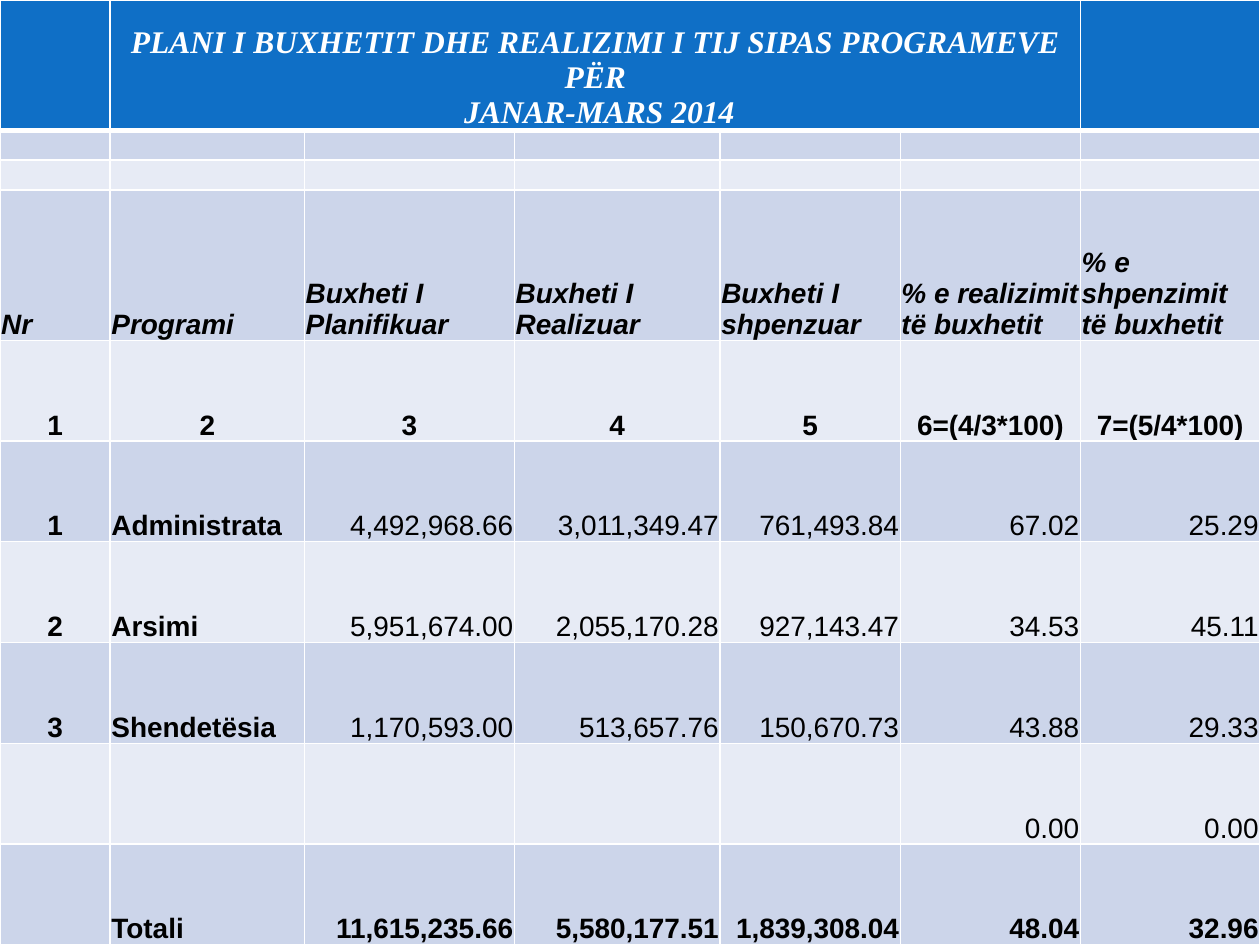
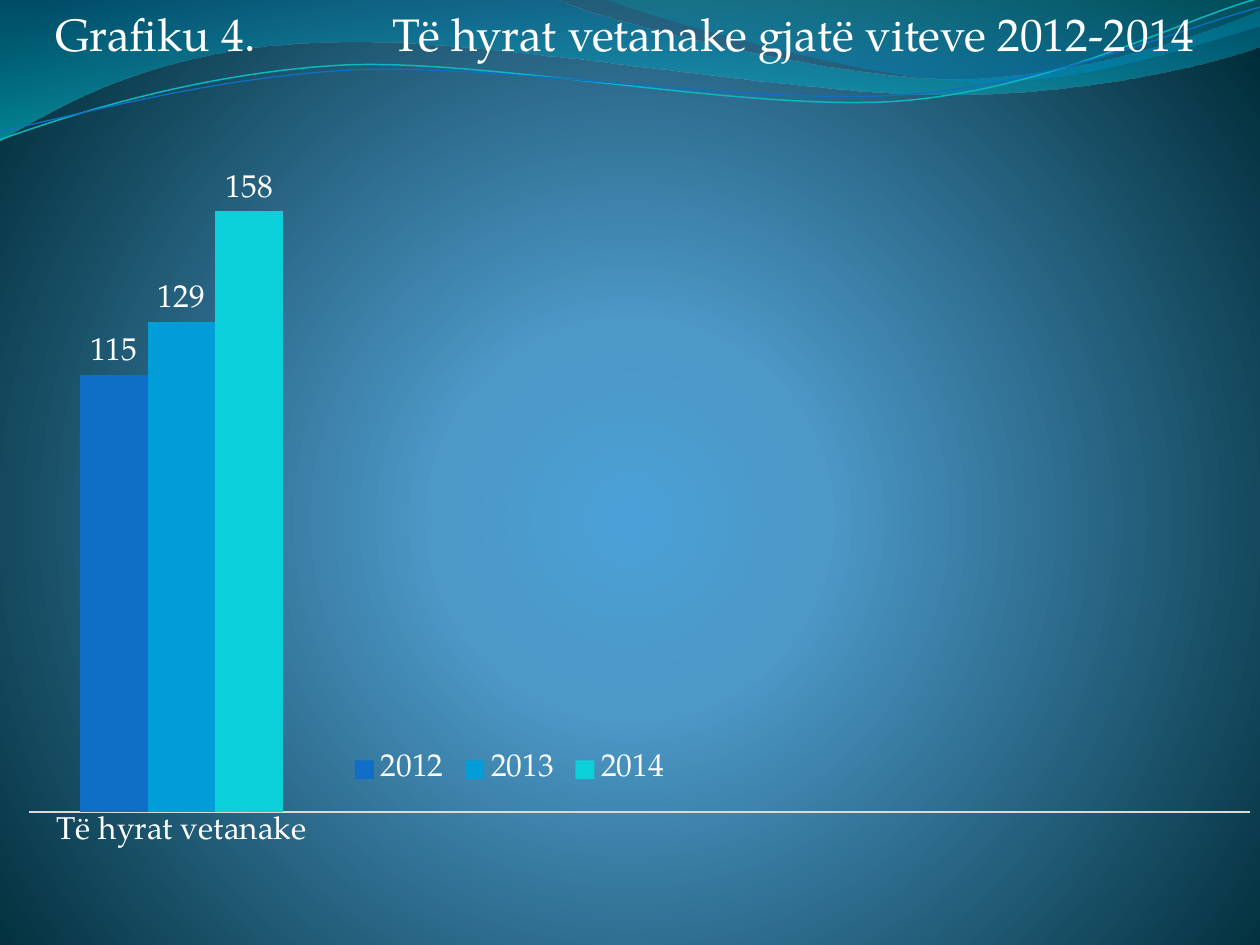
import pptx
import pptx.chart.data
import pptx.dml.color
import pptx.enum.chart
import pptx.enum.text
import pptx.oxml.ns
import pptx.util
from lxml import etree

Pt = pptx.util.Pt
qn = pptx.oxml.ns.qn
ALIGN = pptx.enum.text.PP_ALIGN
LEFT, CENTER, RIGHT = ALIGN.LEFT, ALIGN.CENTER, ALIGN.RIGHT
WIDTH, HEIGHT = 720, 540

# Colours and fonts
WHITE, BLACK = "FFFFFF", "000000"
BLUE, SKY, CYAN = "0F6FC6", "009DD9", "0BD0D9"
DARK_ROW, LIGHT_ROW = "CCD5EA", "E7EBF5"
THEME_FONT, TABLE_FONT, HEADING_FONT = "TeX Gyre Pagella", "Arial", "Times New Roman"

# Wave outlines: a start, then lines (x, y) and curves (two handles and an end)
UPPER_WAVE = [(0, 0), (317, -1), (343, 12, 478, 45, 546, 45), (614, 45, 690, 19, 720, 6),
              (721, 26), (708, 32, 626, 55, 537, 54), (448, 54, 275, 20, 185, 24),
              (93, 26, 33, 60, -1, 81)]
RIGHT_WAVE = [(345, -1), (366, 8, 491, 45, 554, 47), (616, 50, 692, 23, 720, 15), (720, 0)]
TEAL_CURVE = [(-2, 63), (34, 52, 114, 29.5, 199, 29.5), (284, 30.5, 426, 67, 512, 65),
              (600, 62.5, 676, 26, 721, 16)]
BLUE_CURVE = [(-2, 58), (33, 53.5, 118, 32.5, 204, 32.5), (290, 33.5, 429, 63.5, 515, 61.5),
              (602, 59.5, 679, 30, 722, 21)]
CURVE_TILT = -2.7

# Budget table
COLUMN_WIDTHS = [63, 111, 120, 117.5, 103, 103, 102.5]
TOP_ROW_HEIGHTS = [74.5, 17, 17, 86]
BUDGET_HEADING = ["PLANI I BUXHETIT DHE REALIZIMI I TIJ SIPAS PROGRAMEVE PËR", " JANAR-MARS 2014"]
EMPTY_ROW = [""] * 7
BUDGET_ROWS = [
    EMPTY_ROW,
    EMPTY_ROW,
    ["Nr", "Programi", "Buxheti I Planifikuar", "Buxheti I Realizuar", "Buxheti I shpenzuar",
     "% e realizimit të buxhetit", "% e shpenzimit të buxhetit"],
    ["1", "2", "3", "4", "5", "6=(4/3*100)", "7=(5/4*100)"],
    ["1", "Administrata", "4,492,968.66", "3,011,349.47", "761,493.84", "67.02", "25.29"],
    ["2", "Arsimi", "5,951,674.00", "2,055,170.28", "927,143.47", "34.53", "45.11"],
    ["3", "Shendetësia", "1,170,593.00", "513,657.76", "150,670.73", "43.88", "29.33"],
    ["", "", "", "", "", "0.00", "0.00"],
    ["", "Totali", "11,615,235.66", "5,580,177.51", "1,839,308.04", "48.04", "32.96"],
]
LABEL_ROW, NUMBER_ROW, TOTAL_ROW = 3, 4, 9

# Own revenues by year
REVENUES = [("2012", 115, BLUE), ("2013", 129, SKY), ("2014", 158, CYAN)]


def color(hex_code):
    return pptx.dml.color.RGBColor.from_string(hex_code)


def style_font(font, name=THEME_FONT, size=18, ink=WHITE, bold=False, italic=False):
    font.name, font.size, font.bold, font.italic = name, Pt(size), bold, italic
    font.color.rgb = color(ink)


def write(paragraph, text, align=LEFT, **font_format):
    paragraph.alignment = align
    run = paragraph.add_run()
    run.text = text
    style_font(run.font, **font_format)


def add_xml(parent, tag, **attributes):
    return etree.SubElement(parent, qn(tag), {key: str(value) for key, value in attributes.items()})


def add_gradient(owner, fill, stops, circle=None):
    """Stops are (percent, colour, opacity percent); without a circle the blend runs downwards."""
    fill.gradient()
    gradient = owner.element.find(".//" + qn("a:gradFill"))
    gradient.clear()
    stop_list = add_xml(gradient, "a:gsLst")
    for position, hex_code, opacity in stops:
        stop = add_xml(stop_list, "a:gs", pos=position * 1000)
        tint = add_xml(stop, "a:srgbClr", val=hex_code)
        if opacity < 100:
            add_xml(tint, "a:alpha", val=opacity * 1000)
    if circle:
        add_xml(add_xml(gradient, "a:path", path="circle"), "a:fillToRect", **circle)
    else:
        add_xml(gradient, "a:lin", ang=5400000, scaled=0)


def bend(shape, outline):
    """Turn the straight segments that stand for curves into Bézier curves."""
    segments = shape.element.findall(".//" + qn("a:lnTo"))
    for straight, segment in zip(segments, outline[1:]):
        if len(segment) == 2:
            continue
        curve = etree.Element(qn("a:cubicBezTo"))
        for x, y in (segment[:2], segment[2:4], segment[4:]):
            add_xml(curve, "a:pt", x=Pt(x) - shape.left, y=Pt(y) - shape.top)
        straight.getparent().replace(straight, curve)


class Deck:
    def __init__(self):
        self.presentation = pptx.Presentation()
        self.presentation.slide_width = Pt(WIDTH)
        self.presentation.slide_height = Pt(HEIGHT)
        self.master = self.presentation.slide_master
        self.slide = None

    def new_slide(self, layout):
        self.slide = self.presentation.slides.add_slide(self.presentation.slide_layouts[layout])

    def background(self):
        add_gradient(self.master, self.master.background.fill,
                     [(0, "4AA0D6", 100), (25, "4C98C7", 100), (100, "002C38", 100)],
                     circle={"l": 10000, "t": 110000, "r": 10000, "b": 100000})

    def wave(self, outline, stops=None, line=None):
        """Draw a band (stops) or a thin curve (line) and place it on the master."""
        corners = [(Pt(segment[-2]), Pt(segment[-1])) for segment in outline]
        builder = self.slide.shapes.build_freeform(*corners[0], scale=1.0)
        builder.add_line_segments(corners[1:], close=stops is not None)
        shape = builder.convert_to_shape()
        bend(shape, outline)
        shape.shadow.inherit = False
        if stops:
            add_gradient(shape, shape.fill, stops)
            shape.line.fill.background()
        else:
            shape.rotation = CURVE_TILT
            shape.fill.background()
            shape.line.color.rgb = color(line[0])
            shape.line.width = Pt(line[1])
        tree = self.master.shapes.element
        shape.element.nvSpPr.cNvPr.set("id", str(100 + len(tree)))
        tree.append(shape.element)

    def title(self, label, text):
        title = self.slide.shapes.title
        title.left, title.top, title.width, title.height = 0, 0, Pt(WIDTH), Pt(HEIGHT)
        frame = title.text_frame
        frame.word_wrap = True
        frame.auto_size = pptx.enum.text.MSO_AUTO_SIZE.NONE
        frame.vertical_anchor = pptx.enum.text.MSO_ANCHOR.TOP
        frame.margin_left, frame.margin_right = Pt(31.5), Pt(1.5)
        frame.margin_top = frame.margin_bottom = Pt(3.6)
        write(frame.paragraphs[0], f"{label}\t{text}", size=26)
        properties = title.element.find(".//" + qn("a:pPr"))
        add_xml(add_xml(properties, "a:tabLst"), "a:tab", pos=Pt(193), algn="l")

    def table(self, widths, heights):
        table = self.slide.shapes.add_table(
            len(heights), len(widths), 0, 0, Pt(WIDTH), Pt(HEIGHT)).table
        table.first_row = table.horz_banding = False
        for column, width in zip(table.columns, widths):
            column.width = Pt(width)
        for row, height in zip(table.rows, heights):
            row.height = Pt(height)
        return table

    def cell(self, cell, fill, lines, bottom_border=1, **text_format):
        properties = cell._tc.get_or_add_tcPr()
        for side in "LRTB":
            width = bottom_border if side == "B" else 1
            border = add_xml(properties, "a:ln" + side, w=Pt(width))
            add_xml(add_xml(border, "a:solidFill"), "a:srgbClr", val=WHITE)
        cell.fill.solid()
        cell.fill.fore_color.rgb = color(fill)
        cell.margin_left = cell.margin_right = cell.margin_top = Pt(0.72)
        cell.margin_bottom = 0
        cell.vertical_anchor = pptx.enum.text.MSO_ANCHOR.BOTTOM
        frame = cell.text_frame
        for index, line in enumerate(lines):
            paragraph = frame.add_paragraph() if index else frame.paragraphs[0]
            write(paragraph, line, **text_format)
        if not lines:  # small type keeps the narrow rows low
            add_xml(cell._tc.find(".//" + qn("a:p")), "a:endParaRPr", sz=1000)

    def column_chart(self, category, series, top, maximum):
        data = pptx.chart.data.CategoryChartData()
        data.categories = [category, "", "", ""]
        for name, value, _ in series:
            data.add_series(name, [value, None, None, None])
        chart = self.slide.shapes.add_chart(
            pptx.enum.chart.XL_CHART_TYPE.COLUMN_CLUSTERED,
            0, Pt(top), Pt(WIDTH), Pt(HEIGHT - top), data).chart
        style_font(chart.font)
        chart.has_title = False

        # Axes
        chart.value_axis.visible = False
        chart.value_axis.has_major_gridlines = False
        chart.value_axis.minimum_scale, chart.value_axis.maximum_scale = 0, maximum
        chart.category_axis.major_tick_mark = pptx.enum.chart.XL_TICK_MARK.NONE
        chart.category_axis.format.line.color.rgb = color("D9D9D9")
        chart.category_axis.format.line.width = Pt(1.25)

        # Columns and their values
        plot = chart.plots[0]
        plot.gap_width, plot.overlap, plot.vary_by_categories = 150, 0, False
        plot.has_data_labels = True
        plot.data_labels.show_value = True
        plot.data_labels.position = pptx.enum.chart.XL_LABEL_POSITION.OUTSIDE_END
        style_font(plot.data_labels.font)
        for columns, (_, _, hex_code) in zip(plot.series, series):
            columns.format.fill.solid()
            columns.format.fill.fore_color.rgb = color(hex_code)

        # Legend and fixed places
        chart.has_legend = True
        chart.legend.position = pptx.enum.chart.XL_LEGEND_POSITION.TOP
        chart.legend.include_in_layout = False
        style_font(chart.legend.font)
        chart_xml = chart.element.find(qn("c:chart"))
        self.place(chart_xml.find(qn("c:plotArea")), 0, (0.023, 0.062, 0.969, 0.786), inner=True)
        self.place(chart_xml.find(qn("c:legend")), 1, (0.273, 0.774, 0.263, 0.05))

    @staticmethod
    def place(part, index, box, inner=False):
        for old_layout in part.findall(qn("c:layout")):
            part.remove(old_layout)
        layout = etree.Element(qn("c:layout"))
        part.insert(index, layout)
        manual = add_xml(layout, "c:manualLayout")
        if inner:
            add_xml(manual, "c:layoutTarget", val="inner")
        for mode in ("xMode", "yMode"):
            add_xml(manual, "c:" + mode, val="edge")
        for side, share in zip("xywh", box):
            add_xml(manual, "c:" + side, val=share)


def budget_format(row, column):
    align = CENTER if row == NUMBER_ROW or column == 0 else RIGHT
    if row == LABEL_ROW or (column == 1 and row != NUMBER_ROW):
        align = LEFT
    bold = row in (LABEL_ROW, NUMBER_ROW, TOTAL_ROW) or column < 2
    return {"align": align, "bold": bold, "italic": row == LABEL_ROW}


def budget_slide(deck):
    low_height = (HEIGHT - sum(TOP_ROW_HEIGHTS)) / 6
    table = deck.table(COLUMN_WIDTHS, TOP_ROW_HEIGHTS + [low_height] * 6)
    for column in range(len(COLUMN_WIDTHS)):
        deck.cell(table.cell(0, column), BLUE, BUDGET_HEADING if column == 1 else [],
                  bottom_border=3, align=CENTER, name=HEADING_FONT, bold=True, italic=True)
    table.cell(0, 1).merge(table.cell(0, 5))
    for row, values in enumerate(BUDGET_ROWS, start=1):
        for column, value in enumerate(values):
            deck.cell(table.cell(row, column), DARK_ROW if row % 2 else LIGHT_ROW,
                      [value] if value else [], name=TABLE_FONT, size=16, ink=BLACK,
                      **budget_format(row, column))


def main():
    deck = Deck()

    # Shared background and waves
    deck.new_slide(6)
    deck.background()
    deck.wave(UPPER_WAVE, stops=[(0, "0074A1", 45), (100, "00C6CF", 55)])
    deck.wave(RIGHT_WAVE, stops=[(0, "00A1A9", 30), (80, "008BBF", 45)])
    deck.wave(TEAL_CURVE, line=("0AB8BF", 0.85))
    deck.wave(BLUE_CURVE, line=(BLUE, 0.75))

    # Budget by programme
    budget_slide(deck)

    # Own revenues
    deck.new_slide(5)
    deck.title("Grafiku 4.", "Të hyrat vetanake gjatë viteve 2012-2014")
    deck.column_chart("Të hyrat vetanake", REVENUES, top=42, maximum=180)

    deck.presentation.save("out.pptx")


if __name__ == "__main__":
    main()
